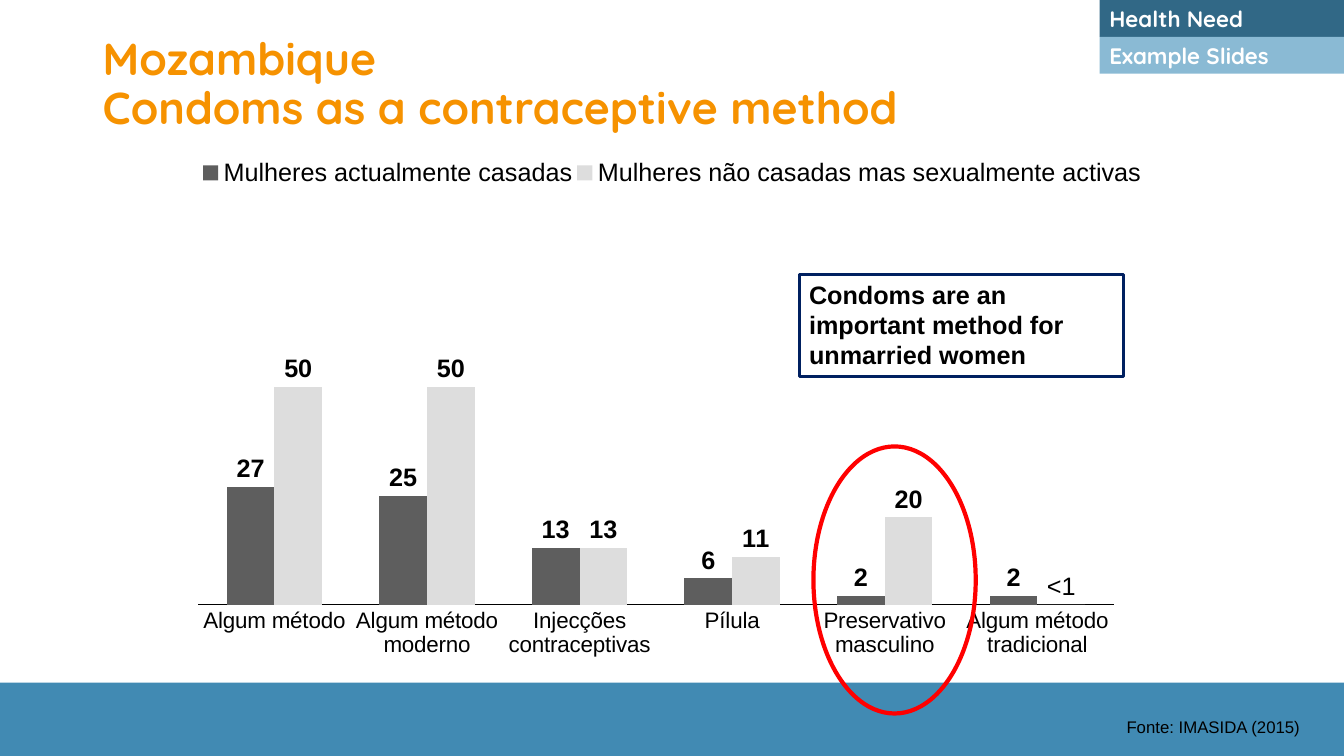
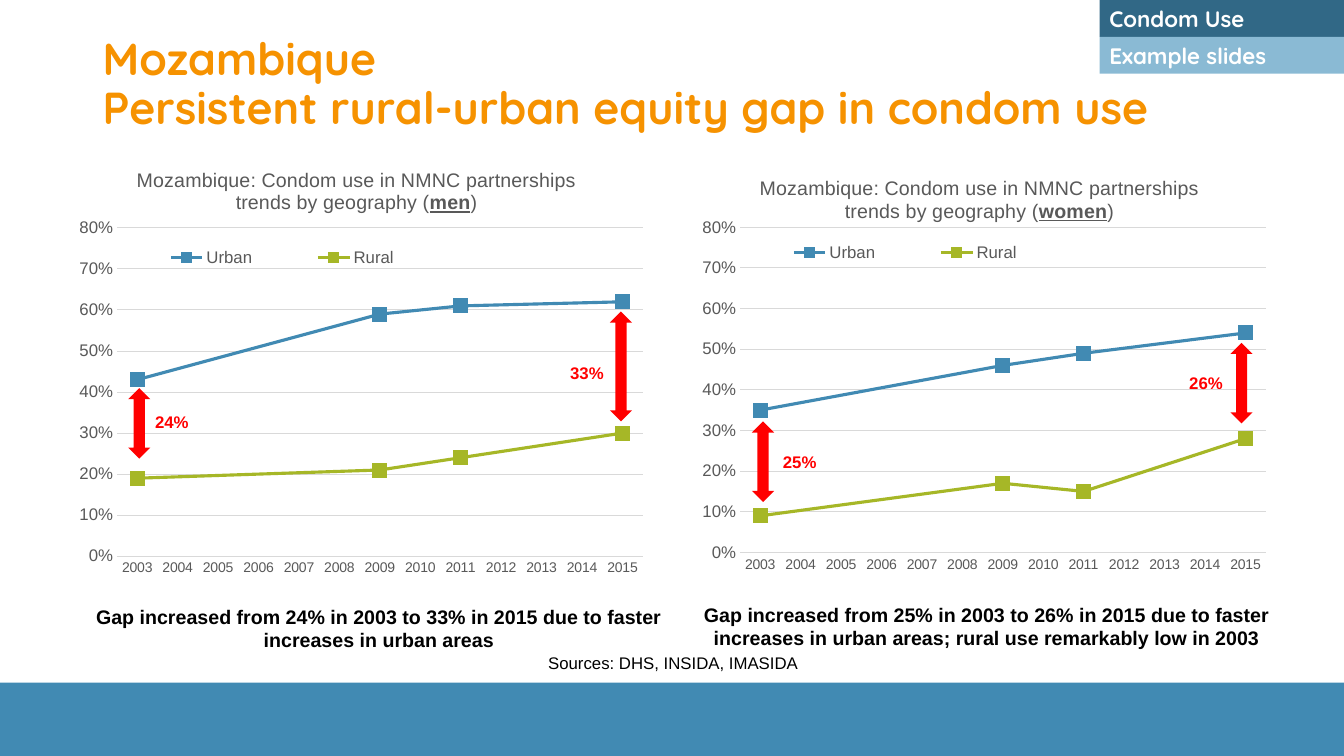
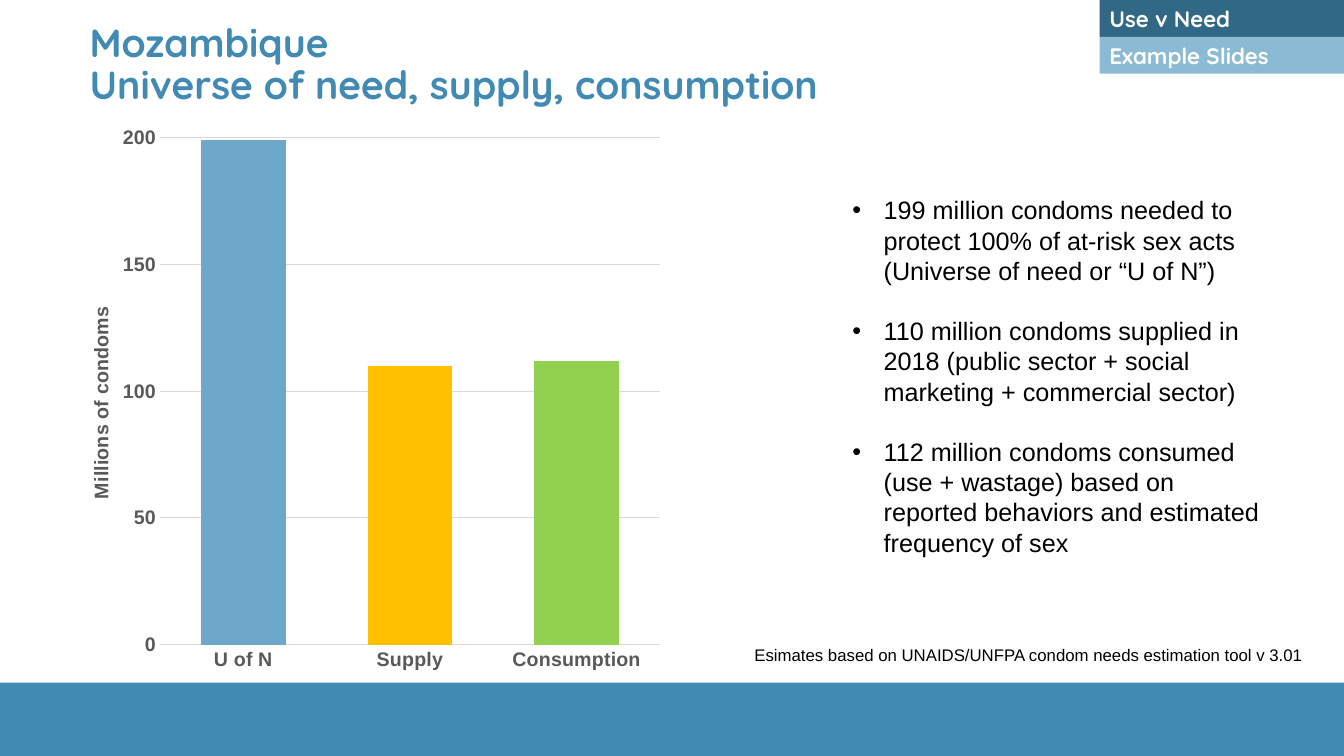
"""Build three slides on condom need and use in Mozambique."""
from pptx import Presentation
from pptx.chart.data import CategoryChartData
from pptx.dml.color import RGBColor
from pptx.enum.chart import XL_CHART_TYPE, XL_LABEL_POSITION, XL_LEGEND_POSITION, XL_MARKER_STYLE, XL_TICK_MARK
from pptx.enum.shapes import MSO_SHAPE
from pptx.enum.text import MSO_ANCHOR, PP_ALIGN
from pptx.oxml import parse_xml
from pptx.oxml.ns import nsdecls
from pptx.util import Cm, Pt

tint = RGBColor.from_string
BLUE, LIME, ORANGE, RED = "418AB3", "A6B727", "F69200", "FF0000"
BLACK, WHITE, GREY, PALE = "000000", "FFFFFF", "595959", "D9D9D9"
HEAD, BODY = "Quicksand", "Arial"


def write(page, text, box, shape=None, fill=None, line=None, width=0, size=12,
          color=BLACK, bold=False, font=BODY, align=PP_ALIGN.LEFT,
          anchor=MSO_ANCHOR.TOP, wrap=True, pitch=None, after=0, bullet=False):
    """Add a text box or a shape; each line of the text is a paragraph."""
    place = map(Cm, box)
    if shape is None:
        item = page.shapes.add_textbox(*place)
    else:
        item = page.shapes.add_shape(shape, *place)
        item.shadow.inherit = False
        if fill:
            item.fill.solid()
            item.fill.fore_color.rgb = tint(fill)
        else:
            item.fill.background()
        if line:
            item.line.color.rgb = tint(line)
            item.line.width = Pt(width)
        else:
            item.line.fill.background()
    if not text:
        return
    frame = item.text_frame
    frame.word_wrap = wrap
    frame.vertical_anchor = anchor
    for i, words in enumerate(text.split("\n")):
        para = frame.add_paragraph() if i else frame.paragraphs[0]
        para.alignment = align
        para.line_spacing = pitch
        para.space_after = Pt(after)
        run = para.add_run()
        run.text = words
        run.font.name, run.font.size, run.font.bold = font, Pt(size), bold
        run.font.color.rgb = tint(color)
        if bullet:
            props = para._p.get_or_add_pPr()
            props.set("marL", str(Cm(0.79)))
            props.set("indent", str(-Cm(0.79)))
            props.append(parse_xml(f'<a:buFont {nsdecls("a")} typeface="Arial"/>'))
            props.append(parse_xml(f'<a:buChar {nsdecls("a")} char="•"/>'))


def layout(node, index, inner=False, **parts):
    """Give a chart part a manual layout, in fractions of the chart."""
    for old in node.xpath("c:layout"):
        node.remove(old)
    tags = '<c:layoutTarget val="inner"/>' if inner else ""
    tags += "".join(f'<c:{k}Mode val="edge"/>' for k in "xy")
    tags += "".join(f'<c:{k} val="{v}"/>' for k, v in parts.items())
    node.insert(index, parse_xml(
        f'<c:layout {nsdecls("c")}><c:manualLayout>{tags}</c:manualLayout></c:layout>'))


deck = Presentation()
deck.slide_width, deck.slide_height = Cm(33.87), Cm(19.05)

heads = [
    ("Condoms as a contraceptive method", ORANGE, 32, (2.34, 0.81, 29.21, 2.69),
     "Health Need", "Example Slides"),
    ("Persistent rural-urban equity gap in condom use", ORANGE, 32, (2.34, 0.81, 29.21, 2.69),
     "Condom Use", "Example slides"),
    ("Universe of need, supply, consumption", BLUE, 28, (2.01, 0, 25, 3.32),
     "Use v Need", "Example Slides"),
]
for title, color, size, box, *tags in heads:
    page = deck.slides.add_slide(deck.slide_layouts[6])
    write(page, "", (0, 17.2, 33.87, 1.85), shape=MSO_SHAPE.RECTANGLE, fill=BLUE)
    write(page, f"Mozambique\n{title}", box, size=size, color=color, bold=True,
          font=HEAD, anchor=MSO_ANCHOR.MIDDLE, pitch=0.9)
    for i, (tag, fill) in enumerate(zip(tags, ("316886", "8ABAD4"))):
        write(page, tag, (27.71, i * 0.93, 6.16, 0.93), shape=MSO_SHAPE.RECTANGLE,
              fill=fill, size=16, color=WHITE, bold=True, font=HEAD, anchor=MSO_ANCHOR.MIDDLE)
need, use, gap = deck.slides

years = [str(year) for year in range(2003, 2016)]
known = ("2003", "2009", "2011", "2015")
trends = [
    {"Urban": (0.43, 0.59, 0.61, 0.62), "Rural": (0.19, 0.21, 0.24, 0.3)},
    {"Urban": (0.35, 0.46, 0.49, 0.54), "Rural": (0.09, 0.17, 0.15, 0.28)},
]
men, women = [{name: [dict(zip(known, vals)).get(year) for year in years]
               for name, vals in trend.items()} for trend in trends]
methods = ["Algum método", "Algum método moderno", "Injecções contraceptivas",
           "Pílula", "Preservativo masculino", "Algum método tradicional"]
status = {"Mulheres actualmente casadas": (27, 25, 13, 6, 2, 2),
          "Mulheres não casadas mas sexualmente activas": (50, 50, 13, 11, 20, 0)}
totals = {"Series 1": (199, 110, 112)}
bars, lines = XL_CHART_TYPE.COLUMN_CLUSTERED, XL_CHART_TYPE.LINE_MARKERS

plans = [
    (need, bars, (4.98, 3.15, 23.9, 15.09), methods, status, BLACK, BLACK, 16, 16, False,
     110, 10, "General", (0, 0, 0.966, 0.801)),
    (use, lines, (1.78, 3.94, 14.43, 10.62), years, men, GREY, PALE, 10, 12, False,
     0.8, 0.1, "0%", (0.081, 0.17, 0.919, 0.779)),
    (use, lines, (17.48, 3.94, 14.43, 10.52), years, women, GREY, PALE, 10, 12, False,
     0.8, 0.1, "0%", (0.081, 0.17, 0.919, 0.779)),
    (gap, bars, (1.52, 2.92, 15.42, 14.27), ["U of N", "Supply", "Consumption"], totals,
     GREY, PALE, 14, 14, True, 200, 50, "General", (0.163, 0.039, 0.817, 0.895)),
]
charts = []
for page, kind, box, cats, rows, ink, rule, small, big, bold, top, step, form, plot in plans:
    data = CategoryChartData()
    data.categories = cats
    for name, vals in rows.items():
        data.add_series(name, vals)
    chart = page.shapes.add_chart(kind, *map(Cm, box), data).chart
    charts.append(chart)
    chart.has_title = chart.has_legend = False
    chart.font.name, chart.font.size = BODY, Pt(10)
    chart.plots[0].vary_by_categories = False
    layout(chart._chartSpace.xpath("c:chart/c:plotArea")[0], 0, inner=True, **dict(zip("xywh", plot)))
    for axis, size in ((chart.category_axis, small), (chart.value_axis, big)):
        axis.major_tick_mark = axis.minor_tick_mark = XL_TICK_MARK.NONE
        font = axis.tick_labels.font
        font.name, font.size, font.bold = BODY, Pt(size), bold
        font.color.rgb = tint(ink)
    edge = chart.category_axis.format.line
    edge.color.rgb, edge.width = tint(rule), Pt(0.75)
    axis.minimum_scale, axis.maximum_scale, axis.major_unit = 0, top, step
    axis.tick_labels.number_format = form
    axis.tick_labels.number_format_is_linked = False
    axis.format.line.fill.background()
    grid = axis.major_gridlines.format.line
    grid.color.rgb, grid.width = tint(PALE), Pt(0.75)

keys = [
    (charts[0], XL_LEGEND_POSITION.TOP, 18, BLACK, (0, 0.05, 1, 0.06)),
    (charts[1], XL_LEGEND_POSITION.BOTTOM, 12, GREY, (0.07, 0.2, 0.6, 0.08)),
    (charts[2], XL_LEGEND_POSITION.BOTTOM, 12, GREY, (0.07, 0.19, 0.6, 0.08)),
]
for chart, side, size, color, spot in keys:
    chart.has_legend = True
    key = chart.legend
    key.position, key.include_in_layout = side, False
    key.font.name, key.font.size = BODY, Pt(size)
    key.font.color.rgb = tint(color)
    layout(key._element, 1, **dict(zip("xywh", spot)))

chart = charts[0]
chart.value_axis.has_major_gridlines = chart.value_axis.visible = False
chart.plots[0].gap_width, chart.plots[0].overlap = 120, 0
for row, color in zip(chart.series, ("5E5E5E", "DDDDDD")):
    row.format.fill.solid()
    row.format.fill.fore_color.rgb = tint(color)
    marks = row.data_labels
    marks.show_value, marks.position = True, XL_LABEL_POSITION.OUTSIDE_END
    marks.font.name, marks.font.size, marks.font.bold = BODY, Pt(18), True
    marks.font.color.rgb = tint(BLACK)
mark = row.points[5].data_label
run = mark.text_frame.paragraphs[0].add_run()
run.text = "<1"
run.font.name, run.font.size, run.font.bold = BODY, Pt(18), False
run.font.color.rgb = tint(BLACK)
mark.position = XL_LABEL_POSITION.OUTSIDE_END

write(need, "Condoms are an important method for unmarried women", (20.14, 6.91, 8.18, 2.57),
      shape=MSO_SHAPE.RECTANGLE, line="002060", width=2.25, size=18, bold=True)
write(need, "Fonte: IMASIDA (2015)", (28.14, 17.93, 4.93, 0.76), wrap=False)
write(need, "", (20.5, 11.25, 4.09, 6.73), shape=MSO_SHAPE.OVAL, line=RED, width=3)

for chart, group, y in ((charts[1], "men", 0.02), (charts[2], "women", 0.04)):
    chart._chartSpace.xpath("c:chart/c:dispBlanksAs")[0].set("val", "span")
    for row, color in zip(chart.series, (BLUE, LIME)):
        row.smooth = False
        row.format.line.color.rgb, row.format.line.width = tint(color), Pt(2.25)
        row.marker.style, row.marker.size = XL_MARKER_STYLE.SQUARE, 10
        row.marker.format.fill.solid()
        row.marker.format.fill.fore_color.rgb = tint(color)
        row.marker.format.line.color.rgb = tint(color)
    para = chart.chart_title.text_frame.paragraphs[0]
    intro = "Mozambique: Condom use in NMNC partnerships trends by geography ("
    for words, strong in ((intro, False), (group, True), (")", False)):
        run = para.add_run()
        run.text = words
        run.font.name, run.font.size = BODY, Pt(14)
        run.font.bold = run.font.underline = strong
        run.font.color.rgb = tint(GREY)
    layout(chart.chart_title._element, 1, x=0.11, y=y)

write(use, "Sources: DHS, INSIDA, IMASIDA", (13.49, 16.33, 6.88, 0.76),
      align=PP_ALIGN.RIGHT, wrap=False)
notes = [
    ("Gap increased from 24% in 2003 to 33% in 2015 due to faster increases in urban areas",
     2.16, 15.11),
    ("Gap increased from 25% in 2003 to 26% in 2015 due to faster increases in urban areas; "
     "rural use remarkably low in 2003", 17.48, 15.06),
]
for note, x, y in notes:
    write(use, note, (x, y, 14.78, 1.45), size=14, bold=True, align=PP_ALIGN.CENTER)
spans = [
    ("24%", 3.23, 9.78, 1.78, 3.66, 10.26),
    ("33%", 15.37, 7.85, 2.77, 14.12, 9.02),
    ("25%", 18.95, 10.62, 2.03, 19.48, 11.25),
    ("26%", 31.01, 8.64, 2.03, 29.72, 9.27),
]
for share, x, y, tall, left, top in spans:
    write(use, "", (x, y, 0.56, tall), shape=MSO_SHAPE.UP_DOWN_ARROW, fill=RED)
    write(use, share, (left, top, 1.37, 0.76), color=RED, bold=True, wrap=False)

chart = charts[3]
chart.plots[0].gap_width, chart.plots[0].overlap = 97, -27
for i, color in enumerate(("6DA8CA", "FFC000", "92D050")):
    fill = chart.series[0].points[i].format.fill
    fill.solid()
    fill.fore_color.rgb = tint(color)
title = chart.value_axis.axis_title
run = title.text_frame.paragraphs[0].add_run()
run.text = "Millions of condoms"
run.font.name, run.font.size, run.font.bold = BODY, Pt(14), True
run.font.color.rgb = tint(GREY)
title.text_frame._txBody.bodyPr.set("rot", "-5400000")
title.text_frame._txBody.bodyPr.set("vert", "horz")
layout(title._element, 1, x=0.04, y=0.33)

facts = [
    "199 million condoms needed to protect 100% of at-risk sex acts (Universe of need or “U of N”)",
    "110 million condoms supplied in 2018 (public sector + social marketing + commercial sector)",
    "112 million condoms consumed (use + wastage) based on reported behaviors and estimated "
    "frequency of sex",
]
write(gap, "\n".join(facts), (21.23, 4.78, 11.1, 9.5), size=18, after=21.5, bullet=True)
write(gap, "Esimates based on UNAIDS/UNFPA condom needs estimation tool v 3.01",
      (18.59, 16.13, 14.5, 0.76), align=PP_ALIGN.RIGHT)

deck.save("out.pptx")
